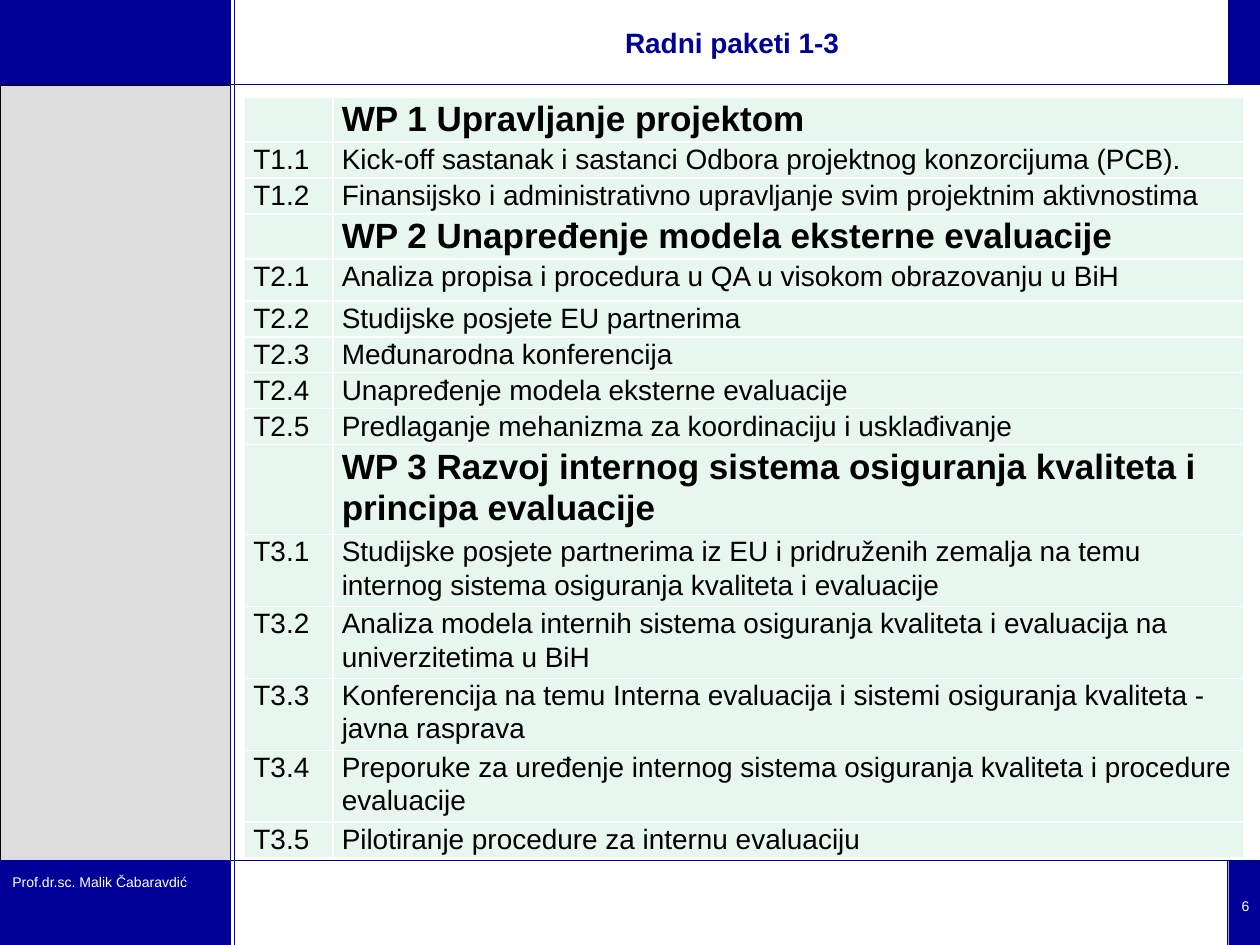
from lxml.etree import SubElement as Sub
from pptx import Presentation
from pptx.dml.color import RGBColor
from pptx.enum.shapes import MSO_CONNECTOR as Link, MSO_SHAPE as Shape
from pptx.enum.text import MSO_ANCHOR as Anchor, PP_ALIGN as Align
from pptx.oxml.ns import qn
from pptx.util import Cm, Pt

NAVY = RGBColor(0x00, 0x00, 0x99)
GREY = RGBColor(0xDD, 0xDD, 0xDD)
MINT = RGBColor(0xE7, 0xF6, 0xEF)
WHITE = RGBColor(0xFF, 0xFF, 0xFF)
BLACK = RGBColor(0x00, 0x00, 0x00)

# Content: each work package with its tasks
TITLE = "Radni paketi 1-3"
AUTHOR = "Prof.dr.sc. Malik Čabaravdić"
PAGE = "6"
PACKS = [
    ("Upravljanje projektom", [
        "Kick-off sastanak i sastanci Odbora projektnog konzorcijuma (PCB).",
        "Finansijsko i administrativno upravljanje svim projektnim aktivnostima",
    ]),
    ("Unapređenje modela eksterne evaluacije", [
        "Analiza propisa i procedura u QA u visokom obrazovanju u BiH",
        "Studijske posjete EU partnerima",
        "Međunarodna konferencija",
        "Unapređenje modela eksterne evaluacije",
        "Predlaganje mehanizma za koordinaciju i usklađivanje",
    ]),
    ("Razvoj internog sistema osiguranja kvaliteta i principa evaluacije", [
        "Studijske posjete partnerima iz EU i pridruženih zemalja na temu "
        "internog sistema osiguranja kvaliteta i evaluacije",
        "Analiza modela internih sistema osiguranja kvaliteta i evaluacija na "
        "univerzitetima u BiH",
        "Konferencija na temu Interna evaluacija i sistemi osiguranja kvaliteta - "
        "javna rasprava",
        "Preporuke za uređenje internog sistema osiguranja kvaliteta i procedure "
        "evaluacije",
        "Pilotiranje procedure za internu evaluaciju",
    ]),
]

# Measures in cm
WIDE, HIGH = 25.4, 19.05
SIDE, TOP, FOOT = 4.65, 1.7, 17.35
EDGE = 24.77
COLS = [1.78, 18.36]
ROWS = [0.89, 0.71, 0.71,
        0.89, 0.84, 0.71, 0.71, 0.71, 0.71,
        1.55, 1.42, 1.42, 1.42, 1.42, 0.71]

BLOCKS = [  # left, top, width, height, fill, outline
    (0, FOOT, SIDE, HIGH - FOOT, NAVY, None),
    (0, TOP + 0.03, SIDE, FOOT - TOP - 0.03, GREY, BLACK),
    (EDGE, 0, WIDE - EDGE, TOP, NAVY, None),
    (EDGE, FOOT, WIDE - EDGE, HIGH - FOOT, NAVY, None),
    (0, 0, SIDE, TOP, NAVY, None),
]
RULES = [  # from x, y to x, y
    (SIDE, HIGH, SIDE, 0),
    (0, FOOT, WIDE, FOOT),
    (0, TOP, WIDE, TOP),
    (SIDE + 0.08, HIGH, SIDE + 0.08, 0),
    (EDGE - 0.03, HIGH, EDGE - 0.03, FOOT),
    (EDGE, TOP, EDGE, 0),
]


def write(frame, text, size=16, color=BLACK, bold=False, align=Align.LEFT, space=None):
    frame.word_wrap = True
    para = frame.paragraphs[0]
    para.alignment = align
    if space:
        para.line_spacing = space
    run = para.add_run()
    run.text = text
    font = run.font
    font.name, font.size, font.bold = "Arial", Pt(size), bold
    font.color.rgb = color


def style(cell):
    cell.margin_left = cell.margin_right = Cm(0.18)
    cell.margin_top = cell.margin_bottom = 0
    props = cell._tc.get_or_add_tcPr()
    for side in ("lnL", "lnR", "lnT", "lnB"):
        line = Sub(props, qn("a:" + side), w=str(Pt(1)))
        Sub(Sub(line, qn("a:solidFill")), qn("a:srgbClr"), val=str(WHITE))
    cell.fill.solid()
    cell.fill.fore_color.rgb = MINT


deck = Presentation()
deck.slide_width, deck.slide_height = Cm(WIDE), Cm(HIGH)
slide = deck.slides.add_slide(deck.slide_layouts[5])
shapes = slide.shapes

# Frame of blocks and rules
for *box, fill, edge in BLOCKS:
    block = shapes.add_shape(Shape.RECTANGLE, *map(Cm, box))
    block.shadow.inherit = False
    block.fill.solid()
    block.fill.fore_color.rgb = fill
    if edge is None:
        block.line.fill.background()
    else:
        block.line.color.rgb = edge
        block.line.width = Pt(0.75)
for ends in RULES:
    rule = shapes.add_connector(Link.STRAIGHT, *map(Cm, ends))
    rule.line.color.rgb = NAVY
    rule.line.width = Pt(0.75)
    Sub(rule._element.spPr, qn("a:effectLst"))

# Footer
for text, box, align in [
    (AUTHOR, (0, 17.48, 4.55, 0.58), Align.LEFT),
    (PAGE, (24.41, 17.96, 1.4, 0.58), Align.CENTER),
]:
    note = shapes.add_textbox(*map(Cm, box))
    write(note.text_frame, text, size=8, color=WHITE, align=align)

# Title
title = shapes.title
title.left, title.top, title.width, title.height = map(Cm, (4.7, 0, 20.12, TOP))
title.text_frame.vertical_anchor = Anchor.MIDDLE
write(title.text_frame, TITLE, color=NAVY, bold=True, align=Align.CENTER)

# Table of work packages
lines = []
for num, (name, tasks) in enumerate(PACKS, 1):
    lines.append(("", f"WP {num} {name}"))
    lines += [(f"T{num}.{pos}", task) for pos, task in enumerate(tasks, 1)]

table = shapes.add_table(len(lines), len(COLS), Cm(4.93), Cm(1.96),
                         Cm(sum(COLS)), Cm(sum(ROWS))).table
table.first_row = table.horz_banding = False
for col, width in zip(table.columns, COLS):
    col.width = Cm(width)
for row, height, line in zip(table.rows, ROWS, lines):
    row.height = Cm(height)
    head = not line[0]
    for cell, text in zip(row.cells, line):
        style(cell)
        if text:
            write(cell.text_frame, text, size=20 if head else 16, bold=head, space=1.07)

deck.save("out.pptx")
